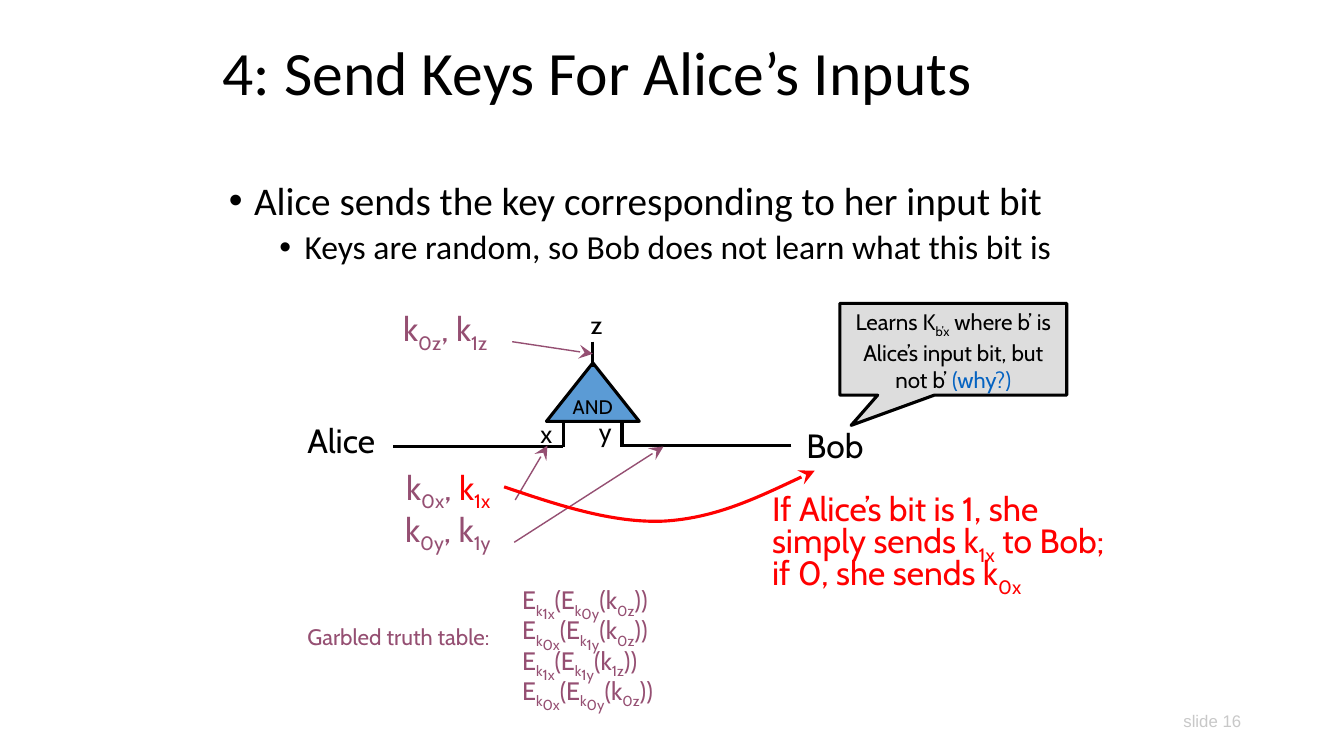
from lxml import etree
from pptx import Presentation
from pptx import util as u
from pptx.dml.color import RGBColor
from pptx.enum import shapes, text
from pptx.oxml import ns

SCALE = 9144
BLACK, PLUM, RED, BLUE = "000000", "954F72", "FF0000", "0563C1"
SUB, SUBSUB = -25, -40


def px(n):
    return u.Emu(n * SCALE)


def color(value):
    return RGBColor.from_string(value)


def child(parent, tag, **attrs):
    return etree.SubElement(parent, ns.qn(tag), attrs)


def add_run(p, words, size, fill=BLACK, base=0, font="Cabin"):
    r = p.add_run()
    r.text = words
    r.font.size = u.Pt(size)
    r.font.name = font
    r.font.color.rgb = color(fill)
    if base:
        r.font._element.set("baseline", str(base * 1000))


def add_runs(p, runs, size, fill):
    for words, *rest in runs:
        base, run_fill = (rest + [0, fill][len(rest):])
        add_run(p, words, size, run_fill, base)


def add_label(s, box, paragraphs, size, fill=BLACK, spacing=None):
    sp = s.shapes.add_textbox(*map(px, box))
    tf = sp.text_frame
    tf.word_wrap = False
    tf.auto_size = text.MSO_AUTO_SIZE.SHAPE_TO_FIT_TEXT
    for i, runs in enumerate(paragraphs):
        p = tf.add_paragraph() if i else tf.paragraphs[0]
        if i and spacing:
            p.line_spacing = spacing
        add_runs(p, runs, size, fill)


def style_line(sp, fill, width, arrow=False):
    sp.line.color.rgb = color(fill)
    sp.line.width = u.Pt(width)
    if arrow:
        child(sp.line._get_or_add_ln(), "a:tailEnd", type="stealth", w="lg", len="lg")


def add_line(s, x1, y1, x2, y2, fill=BLACK, width=2.25, arrow=False):
    c = s.shapes.add_connector(shapes.MSO_CONNECTOR.STRAIGHT, *map(px, (x1, y1, x2, y2)))
    style_line(c, fill, width, arrow)
    child(c._element.spPr, "a:effectLst")


def add_block(s, kind, box, adjustments, fill, runs, size):
    sp = s.shapes.add_shape(kind, *map(px, box))
    for i, value in enumerate(adjustments):
        sp.adjustments[i] = value
    sp.shadow.inherit = False
    sp.fill.solid()
    sp.fill.fore_color.rgb = color(fill)
    style_line(sp, BLACK, 2.25)
    p = sp.text_frame.paragraphs[0]
    p.alignment = text.PP_ALIGN.CENTER
    add_runs(p, runs, size, BLACK)
    return sp


def add_curve(s, points, fill, width):
    builder = s.shapes.build_freeform(*points[0], scale=SCALE)
    builder.add_line_segments(points[1:], close=False)
    sp = builder.convert_to_shape()
    lines = list(sp._element.iter(ns.qn("a:lnTo")))
    for i in range(0, len(lines), 3):
        bezier = child(lines[i].getparent(), "a:cubicBezTo")
        for line in lines[i:i + 3]:
            bezier.append(line[0])
            line.getparent().remove(line)
    sp.shadow.inherit = False
    sp.fill.background()
    style_line(sp, fill, width, arrow=True)


def place(sp, box):
    sp.left, sp.top, sp.width, sp.height = map(px, box)


def add_title(s, box, words):
    sp = s.shapes.title
    place(sp, box)
    sp.text_frame.vertical_anchor = text.MSO_ANCHOR.MIDDLE
    p = sp.text_frame.paragraphs[0]
    p.alignment = text.PP_ALIGN.LEFT
    p.line_spacing = 0.9
    add_run(p, words, 44, font="Calibri")


def add_bullets(s, box, items):
    sp = s.placeholders[1]
    place(sp, box)
    tf = sp.text_frame
    for level, (words, size, before) in enumerate(items):
        p = tf.add_paragraph() if level else tf.paragraphs[0]
        p.level = level
        p.line_spacing = 0.9
        p.space_before = u.Pt(before)
        pPr = p._p.get_or_add_pPr()
        pPr.set("marL", str(px(25 + 50 * level)))
        pPr.set("indent", str(px(-25)))
        child(pPr, "a:buFont", typeface="Arial")
        child(pPr, "a:buChar", char="•")
        add_run(p, words, size, font="Calibri")


def key_pair(wire, second=PLUM):
    return [("k",), ("0" + wire, SUB), (", ",), ("k", 0, second), ("1" + wire, SUB, second)]


def cipher(x, y, z):
    return [("E",), ("k", SUB), (x + "x", SUBSUB), ("(E",), ("k", SUB), (y + "y", SUBSUB),
            ("(k",), (z + "z", SUB), ("))",)]


def add_gate(s):
    sp = add_block(s, shapes.MSO_SHAPE.ISOSCELES_TRIANGLE, (542, 360, 92, 58), [0.5],
                   "5B9BD5", [("AND",)], 14)
    sp.text_frame.word_wrap = False
    sp.text_frame.vertical_anchor = text.MSO_ANCHOR.MIDDLE
    for wire in ((559, 418, 559, 443), (617, 418, 617, 443), (588, 339, 588, 364),
                 (558, 443, 390, 443), (785, 442, 617, 442)):
        add_line(s, *wire)
    for name, x, y in (("x", 526, 410), ("y", 584, 408), ("z", 576, 302)):
        add_label(s, (x, y, 32, 40), [[(name,)]], 18)


def add_keys(s):
    for wire, x, y, second in (("z", 390, 301, PLUM), ("x", 393, 458, RED), ("y", 392, 500, PLUM)):
        add_label(s, (x, y, 120, 50), [key_pair(wire, second)], 24, PLUM)
    for arrow in ((508, 339, 588, 351), (511, 496, 543, 442), (510, 538, 658, 443)):
        add_line(s, *arrow, fill=PLUM, width=1, arrow=True)
    add_curve(s, [(500, 483), (553, 501), (607, 519), (658, 517),
                  (710, 514), (759, 490), (808, 467)], RED, 2.25)


def add_people(s):
    add_label(s, (295, 412, 88, 50), [[("Alice",)]], 24)
    add_label(s, (790, 417, 77, 50), [[("Bob",)]], 24)
    add_label(s, (756, 479, 380, 107), [
        [("If Alice’s bit is 1, she",)],
        [("simply sends k",), ("1x", SUB), (" to Bob;",)],
        [("if 0, she sends k",), ("0x", SUB)],
    ], 24, RED, 0.7)
    sp = add_block(s, shapes.MSO_SHAPE.RECTANGULAR_CALLOUT, (833, 301, 225, 91), [-0.45, 0.83],
                   "DDDDDD", [("Learns K",), ("b’x", SUB),
                              (" where b’ is Alice’s input bit, but not b’ ",),
                              ("(why?)", 0, BLUE)], 16)
    sp.text_frame.vertical_anchor = text.MSO_ANCHOR.TOP


def add_truth_table(s):
    add_label(s, (295, 613, 213, 37), [[("Garbled truth table:",)]], 16, PLUM)
    for row, bits in enumerate(("100", "010", "111", "000")):
        add_label(s, (508, 575 + 30 * row, 167, 40), [cipher(*bits)], 18, PLUM)


def add_slide_number(s):
    sp = s.shapes.add_textbox(*map(px, (1041, 696, 200, 38)))
    sp.text_frame.word_wrap = True
    sp.text_frame.vertical_anchor = text.MSO_ANCHOR.MIDDLE
    p = sp.text_frame.paragraphs[0]
    p.alignment = text.PP_ALIGN.RIGHT
    add_run(p, "slide 16", 12, "C8C8C8", font="Arial")


def main():
    prs = Presentation()
    prs.slide_width, prs.slide_height = px(1333), px(750)
    s = prs.slides.add_slide(prs.slide_layouts[1])
    add_title(s, (211, 25, 922, 100), "4: Send Keys For Alice’s Inputs")
    add_bullets(s, (217, 175, 933, 550), [
        ("Alice sends the key corresponding to her input bit", 28, 10),
        ("Keys are random, so Bob does not learn what this bit is", 24, 5),
    ])
    add_gate(s)
    add_keys(s)
    add_people(s)
    add_truth_table(s)
    add_slide_number(s)
    prs.save("out.pptx")


if __name__ == "__main__":
    main()
